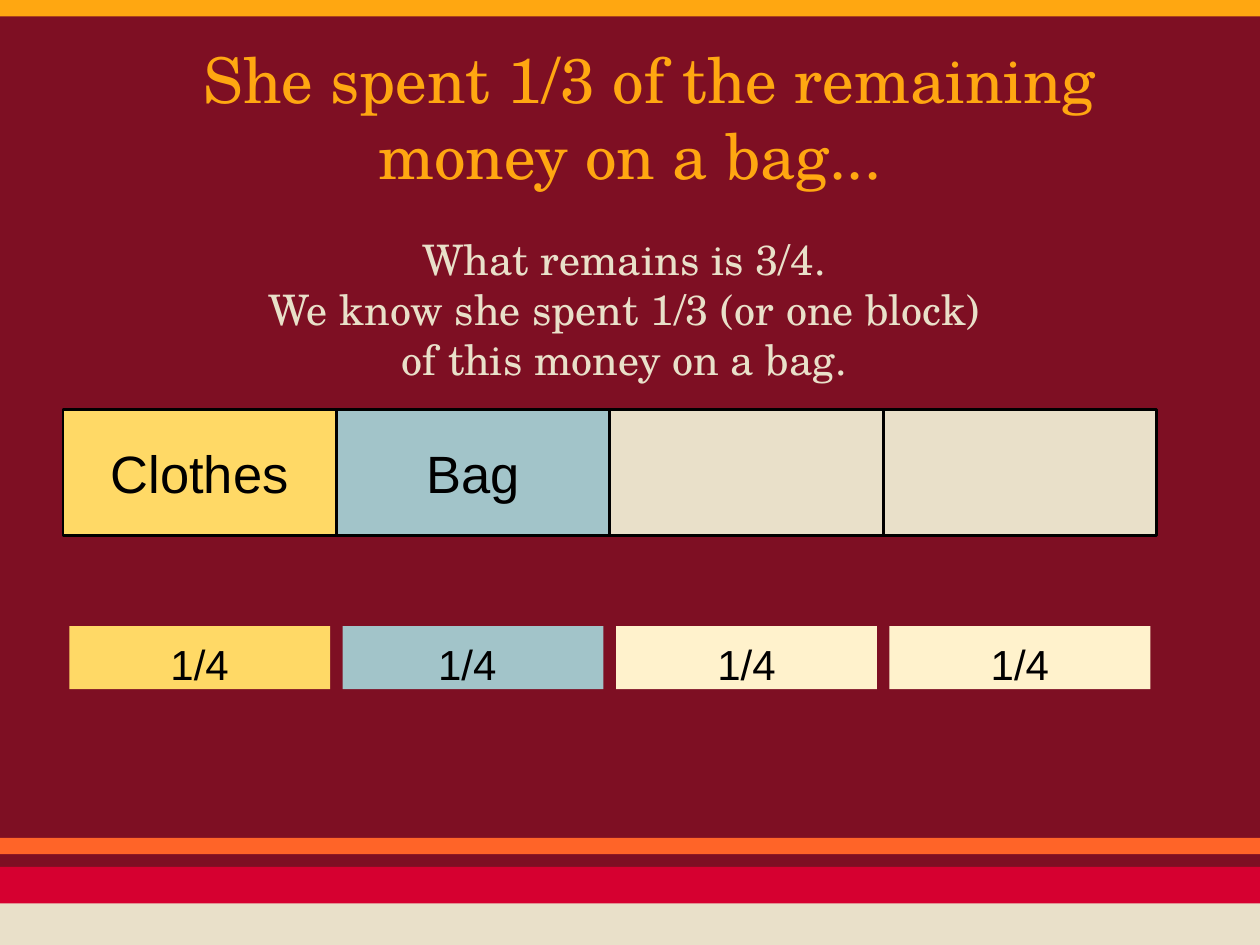
"""Build a fraction bar slide showing the share spent on a bag."""
from pptx import Presentation
from pptx.dml.color import RGBColor
from pptx.enum.shapes import MSO_SHAPE
from pptx.enum.text import MSO_ANCHOR, MSO_AUTO_SIZE, PP_ALIGN
from pptx.util import Inches, Pt

RECT = MSO_SHAPE.RECTANGLE
TOP, MIDDLE = MSO_ANCHOR.TOP, MSO_ANCHOR.MIDDLE
CENTER = PP_ALIGN.CENTER
FIXED = MSO_AUTO_SIZE.NONE

WINE = RGBColor(0x7E, 0x0F, 0x23)
AMBER = RGBColor(0xFF, 0xA7, 0x11)
RED = RGBColor(0xD6, 0x00, 0x30)
SAND = RGBColor(0xE9, 0xE0, 0xC9)
ORANGE = RGBColor(0xFF, 0x64, 0x28)
YELLOW = RGBColor(0xFF, 0xD9, 0x66)
BLUE = RGBColor(0xA2, 0xC4, 0xC9)
CREAM = RGBColor(0xFF, 0xF2, 0xCC)
BLACK = RGBColor(0, 0, 0)

SERIF, SANS = "TeX Gyre Schola", "Arial"
TITLE = ["She spent 1/3 of the remaining money on a bag..."]
BODY = [
    "What remains is 3/4. ",
    "We know she spent 1/3 (or one block) ",
    "of this money on a bag. ",
]
BANDS = [(0, 0.13, AMBER), (6.88, 0.33, RED), (7.17, 0.33, SAND), (6.65, 0.13, ORANGE)]
PARTS = [
    ("Clothes", YELLOW, "1/4", YELLOW),
    ("Bag", BLUE, "1/4 ", BLUE),
    ("", SAND, "1/4", CREAM),
    ("", SAND, "1/4", CREAM),
]
LEFT, STEP, INSET = 0.5, 2.17, 0.05

TITLE_FONT = {"name": SERIF, "size": Pt(36)}
BODY_FONT = {"name": SERIF, "size": Pt(24)}
BLOCK_FONT = {"name": SANS, "size": Pt(30)}
LABEL_FONT = {"name": SANS, "size": Pt(24)}


def write(shape, lines, font, color, anchor, margin=0, indent=0):
    frame = shape.text_frame
    look = {"auto_size": FIXED, "word_wrap": True, "vertical_anchor": anchor}
    look |= {f"margin_{side}": Inches(0.1) for side in ("left", "top", "right", "bottom")}
    for key, value in look.items():
        setattr(frame, key, value)
    frame.text = "\n".join(lines)
    for para in frame.paragraphs:
        para.alignment = CENTER
        props = para._p.get_or_add_pPr()
        props.set("marL", str(Inches(margin)))
        props.set("indent", str(Inches(indent)))
        for run in para.runs:
            for key, value in font.items():
                setattr(run.font, key, value)
            run.font.color.rgb = color


def add_rect(slide, box, fill, border=False):
    rect = slide.shapes.add_shape(RECT, *map(Inches, box))
    rect.shadow.inherit = False
    rect.fill.solid()
    rect.fill.fore_color.rgb = fill
    if border:
        rect.line.color.rgb = BLACK
        rect.line.width = Pt(1.5)
    else:
        rect.line.fill.background()
    return rect


def main():
    deck = Presentation()
    deck.slide_width, deck.slide_height = Inches(10), Inches(7.5)
    slide = deck.slides.add_slide(deck.slide_layouts[5])
    slide.background.fill.solid()
    slide.background.fill.fore_color.rgb = WINE

    for top, height, fill in BANDS:
        add_rect(slide, (0, top, 10, height), fill)

    title = slide.shapes.title
    title.left, title.top, title.width, title.height = map(Inches, (0.5, 0.3, 9, 1.25))
    write(title, TITLE, TITLE_FONT, AMBER, MIDDLE, indent=0.31)

    body = slide.shapes.add_textbox(*map(Inches, (0.5, 1.75, 9, 4.76)))
    write(body, BODY, BODY_FONT, SAND, TOP, margin=0.38, indent=-0.38)

    for i, (name, fill, share, tint) in reversed(list(enumerate(PARTS))):
        left = LEFT + i * STEP
        block = add_rect(slide, (left, 3.25, STEP, 1), fill, border=True)
        if name:
            write(block, [name], BLOCK_FONT, BLACK, MIDDLE)
        label = add_rect(slide, (left + INSET, 4.97, STEP - 2 * INSET, 0.5), tint)
        write(label, [share], LABEL_FONT, BLACK, TOP)

    deck.save("out.pptx")


if __name__ == "__main__":
    main()
